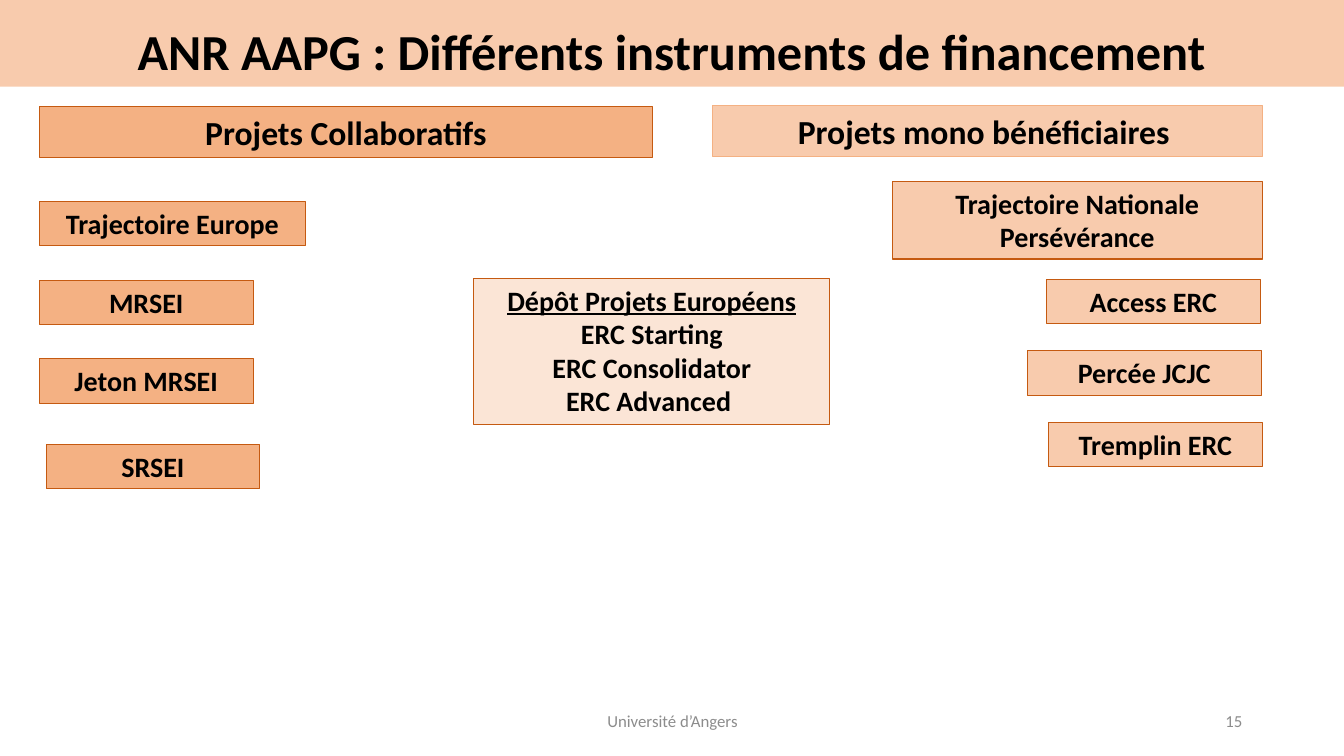
from dataclasses import dataclass

from pptx import Presentation
from pptx.dml.color import RGBColor
from pptx.enum.shapes import MSO_SHAPE as Shape
from pptx.enum.text import MSO_ANCHOR as Anchor, MSO_AUTO_SIZE as AutoSize, PP_ALIGN as Align
from pptx.shapes.autoshape import Shape as AutoShape
from pptx.slide import Slide
from pptx.text.text import TextFrame
from pptx.util import Emu, Inches, Pt


@dataclass(frozen=True)
class Theme:
    font: str = "Calibri"
    black: str = "000000"
    grey: str = "8C8C8C"
    orange: str = "F4B183"
    peach: str = "F8CBAD"
    cream: str = "FBE5D6"
    rust: str = "C55A11"
    title_size: int = 36
    heading_size: int = 24
    box_size: int = 20
    footer_size: int = 12
    line_width: float = 0.75


@dataclass(frozen=True)
class Area:
    """Percentages of the slide's width and height."""
    left: float
    top: float
    width: float
    height: float


@dataclass(frozen=True)
class Box:
    text: str
    area: Area
    fill: str
    line: str
    size: int
    underline_first: bool = False


@dataclass(frozen=True)
class Footer:
    text: str
    area: Area
    align: Align


THEME = Theme()
SLIDE_W, SLIDE_H = Inches(13.33), Inches(7.5)
LEFT_EDGE, RIGHT_EDGE = 2.93, 93.92
HEADING_H, BOX_H, BOX_W = 6.67, 5.87, 15.9
LEFT_TOP, LEFT_PITCH = 26.67, 10.4
RIGHT_TOP, RIGHT_PITCH = 36.93, 9.47


def left_box(text: str, row: float, width: float = BOX_W, indent: float = 0) -> Box:
    area = Area(LEFT_EDGE + indent, LEFT_TOP + row * LEFT_PITCH, width, BOX_H)
    return Box(text, area, THEME.orange, THEME.rust, THEME.box_size)


def right_box(text: str, row: float, width: float = BOX_W, indent: float = 0) -> Box:
    area = Area(RIGHT_EDGE - width - indent, RIGHT_TOP + row * RIGHT_PITCH, width, BOX_H)
    return Box(text, area, THEME.peach, THEME.rust, THEME.box_size)


TITLE = "ANR AAPG : Différents instruments de financement"
TITLE_AREA = Area(0, 0, 100, 11.47)
BOXES = [
    Box("Projets mono bénéficiaires ", Area(RIGHT_EDGE - 40.89, 14, 40.89, HEADING_H),
        THEME.peach, THEME.orange, THEME.heading_size),
    Box("Projets Collaboratifs", Area(LEFT_EDGE, 14.13, 45.61, HEADING_H),
        THEME.orange, THEME.rust, THEME.heading_size),
    left_box("Trajectoire Europe", 0, width=19.8),
    left_box("MRSEI", 1),
    left_box("Jeton MRSEI", 2),
    left_box("SRSEI", 3.09, indent=0.5),
    Box("Trajectoire Nationale Persévérance", Area(RIGHT_EDGE - 27.53, 24, 27.53, 10.27),
        THEME.peach, THEME.rust, THEME.box_size),
    right_box("Access ERC", 0, indent=0.15),
    right_box("Percée JCJC", 1, width=17.4, indent=0.08),
    right_box("Tremplin ERC", 2),
    Box("Dépôt Projets Européens\nERC Starting\nERC Consolidator\nERC Advanced ",
        Area(35.26, 36.8, 26.48, 19.33), THEME.cream, THEME.rust, THEME.box_size,
        underline_first=True),
]
FOOTERS = [
    Footer("Université d’Angers", Area(33.16, 92.67, 33.76, 5.33), Align.CENTER),
    Footer("15", Area(70.67, 92.67, 22.5, 5.33), Align.RIGHT),
]


def place(area: Area) -> tuple[Emu, Emu, Emu, Emu]:
    return (Emu(round(SLIDE_W * area.left / 100)), Emu(round(SLIDE_H * area.top / 100)),
            Emu(round(SLIDE_W * area.width / 100)), Emu(round(SLIDE_H * area.height / 100)))


def style_text(tf: TextFrame, size: int, color: str, bold: bool, align: Align,
               anchor: Anchor) -> None:
    tf.word_wrap = True
    tf.vertical_anchor = anchor
    for p in tf.paragraphs:
        p.alignment = align
        for r in p.runs:
            r.font.name = THEME.font
            r.font.size = Pt(size)
            r.font.bold = bold
            r.font.color.rgb = RGBColor.from_string(color)


def paint(sp: AutoShape, fill: str) -> None:
    sp.fill.solid()
    sp.fill.fore_color.rgb = RGBColor.from_string(fill)


def add_title(slide: Slide) -> None:
    sp = slide.shapes.title
    sp.left, sp.top, sp.width, sp.height = place(TITLE_AREA)
    paint(sp, THEME.peach)
    tf = sp.text_frame
    tf.text = TITLE
    tf.auto_size = AutoSize.NONE
    tf.paragraphs[0].line_spacing = 0.9
    style_text(tf, THEME.title_size, THEME.black, True, Align.CENTER, Anchor.BOTTOM)


def add_box(slide: Slide, box: Box) -> None:
    sp = slide.shapes.add_shape(Shape.RECTANGLE, *place(box.area))
    sp.shadow.inherit = False
    paint(sp, box.fill)
    sp.line.color.rgb = RGBColor.from_string(box.line)
    sp.line.width = Pt(THEME.line_width)
    tf = sp.text_frame
    tf.text = box.text
    tf.auto_size = AutoSize.SHAPE_TO_FIT_TEXT
    style_text(tf, box.size, THEME.black, True, Align.CENTER, Anchor.TOP)
    if box.underline_first:
        tf.paragraphs[0].runs[0].font.underline = True


def add_footer(slide: Slide, footer: Footer) -> None:
    tf = slide.shapes.add_textbox(*place(footer.area)).text_frame
    tf.text = footer.text
    style_text(tf, THEME.footer_size, THEME.grey, False, footer.align, Anchor.MIDDLE)


def main() -> None:
    prs = Presentation()
    prs.slide_width, prs.slide_height = SLIDE_W, SLIDE_H
    slide = prs.slides.add_slide(prs.slide_layouts.get_by_name("Title Only"))
    add_title(slide)
    for box in BOXES:
        add_box(slide, box)
    for footer in FOOTERS:
        add_footer(slide, footer)
    prs.save("out.pptx")


if __name__ == "__main__":
    main()
